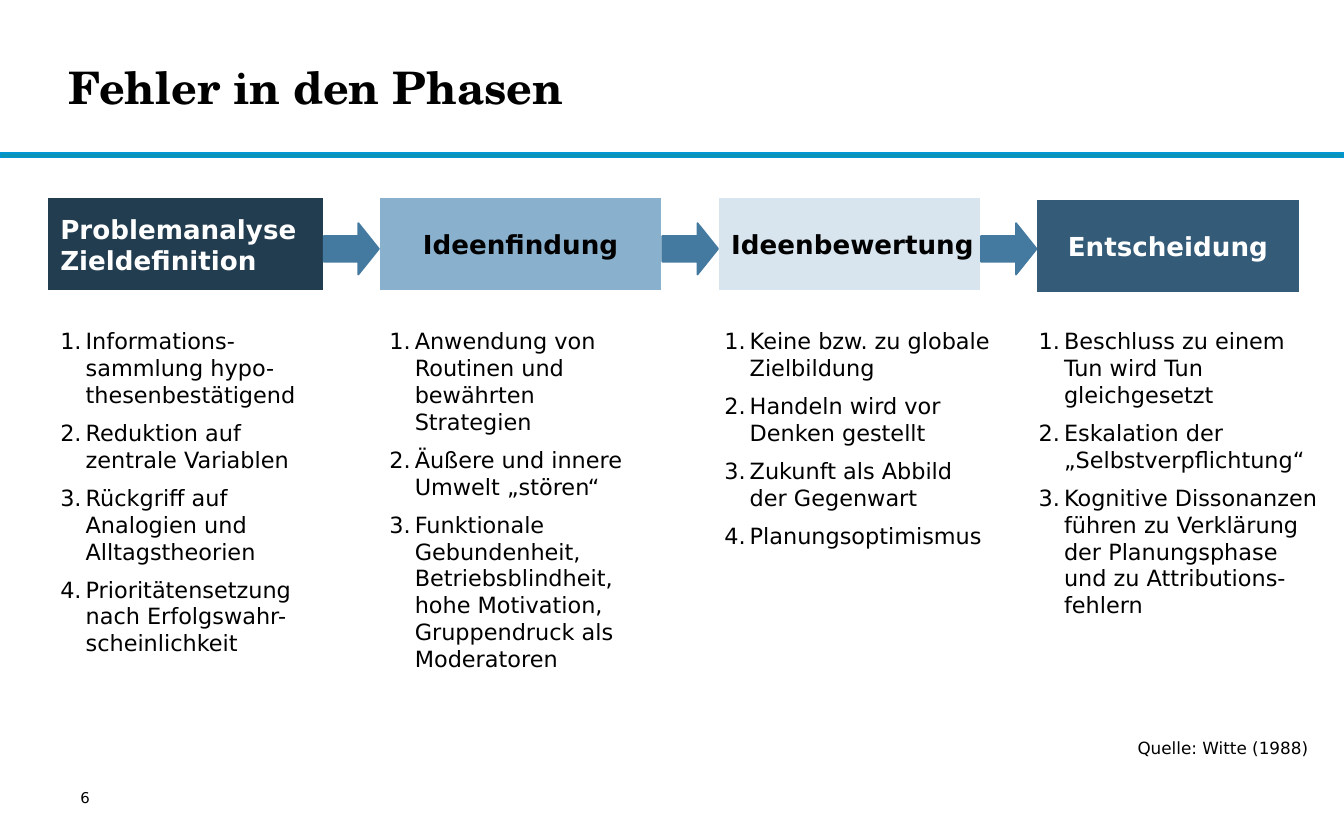
from lxml import etree
from pptx import Presentation, util as u
from pptx.dml.color import RGBColor
from pptx.enum import shapes, text
from pptx.oxml import ns

BLACK = RGBColor(0x00, 0x00, 0x00)
WHITE = RGBColor(0xFF, 0xFF, 0xFF)
RULE_FILL = RGBColor(0x0C, 0x94, 0xB7)
RULE_LINE = RGBColor(0x00, 0x96, 0xD3)
NAVY = RGBColor(0x22, 0x3D, 0x50)
SKY = RGBColor(0x89, 0xB0, 0xCC)
PALE = RGBColor(0xD8, 0xE5, 0xEE)
STEEL = RGBColor(0x34, 0x5B, 0x78)
ARROW = RGBColor(0x45, 0x7A, 0xA0)

LEFT, CENTER, RIGHT = text.PP_ALIGN.LEFT, text.PP_ALIGN.CENTER, text.PP_ALIGN.RIGHT
SERIF, SANS = "TeX Gyre Schola", "DejaVu Sans"

BOX_HEIGHT = 1.78
ARROW_TOP, ARROW_HEIGHT = 4.22, 0.97
LIST_TOP = 6.06


class PhaseSlide:
    """Holds the current slide and its common style."""

    def __init__(self, slide):
        self.slide = slide

    def style(self, paragraph, size, color=BLACK, bold=False, font=SANS, align=LEFT):
        paragraph.alignment = align
        paragraph.font.name = font
        paragraph.font.size = u.Pt(size)
        paragraph.font.bold = bold
        paragraph.font.color.rgb = color

    def shape(self, kind, left, top, width, height, fill, line):
        shape = self.slide.shapes.add_shape(
            kind, u.Cm(left), u.Cm(top), u.Cm(width), u.Cm(height))
        shape.shadow.inherit = False
        shape.fill.solid()
        shape.fill.fore_color.rgb = fill
        shape.line.color.rgb = line
        shape.line.width = u.Pt(1)
        return shape

    def text_box(self, left, top, width, height, words, size, **style):
        shape = self.slide.shapes.add_textbox(
            u.Cm(left), u.Cm(top), u.Cm(width), u.Cm(height))
        frame = shape.text_frame
        frame.word_wrap = True
        frame.text = words
        self.style(frame.paragraphs[0], size, **style)
        return frame

    def title(self, words):
        frame = self.text_box(1.3, 0.38, 19, 2.51, words, 24, bold=True, font=SERIF)
        frame.margin_left = frame.margin_right = 0
        frame.margin_top = frame.margin_bottom = 0
        frame.vertical_anchor = text.MSO_ANCHOR.MIDDLE

    def phase_box(self, left, top, width, words, fill, color, align):
        shape = self.shape(shapes.MSO_SHAPE.RECTANGLE, left, top, width, BOX_HEIGHT,
                           fill, WHITE)
        frame = shape.text_frame
        frame.word_wrap = False
        frame.vertical_anchor = text.MSO_ANCHOR.MIDDLE
        frame.text = words
        for paragraph in frame.paragraphs:
            self.style(paragraph, 14, color, bold=True, align=align)

    def arrow(self, left, right):
        shape = self.shape(shapes.MSO_SHAPE.RIGHT_ARROW, left, ARROW_TOP,
                           right - left, ARROW_HEIGHT, ARROW, ARROW)
        shape.adjustments[1] = 0.4

    def numbered_list(self, left, width, height, items):
        frame = self.text_box(left, LIST_TOP, width, height, "\n".join(items), 12)
        for index, paragraph in enumerate(frame.paragraphs):
            properties = paragraph._p.get_or_add_pPr()
            properties.set("marL", str(u.Cm(0.48)))
            properties.set("indent", str(u.Cm(-0.48)))
            paragraph.space_before = u.Pt(3 if index else 0)
            paragraph.space_after = u.Pt(3)
            etree.SubElement(properties, ns.qn("a:buFont"), typeface="+mj-lt")
            etree.SubElement(properties, ns.qn("a:buAutoNum"), type="arabicPeriod")
            self.style(paragraph, 12)


# Phase boxes: left, top, width, words, fill, text colour, alignment
PHASES = [
    (0.89, 3.73, 5.23, "Problemanalyse\nZieldefinition", NAVY, WHITE, LEFT),
    (7.16, 3.73, 5.36, "Ideenfindung", SKY, BLACK, CENTER),
    (13.57, 3.73, 4.97, "Ideenbewertung", PALE, BLACK, LEFT),
    (19.59, 3.76, 4.97, "Entscheidung", STEEL, WHITE, CENTER),
]

# Errors in each phase: left, width, height, items
ERRORS = [
    (0.89, 5.36, 6.35, [
        "Informations-sammlung hypo-thesenbestätigend",
        "Reduktion auf zentrale Variablen",
        "Rückgriff auf Analogien und Alltagstheorien",
        "Prioritätensetzung nach Erfolgswahr-scheinlichkeit"]),
    (7.11, 5.56, 6.63, [
        "Anwendung von Routinen und bewährten Strategien",
        "Äußere und innere Umwelt „stören“",
        "Funktionale Gebundenheit, Betriebsblindheit, hohe Motivation, "
        "Gruppendruck als Moderatoren"]),
    (13.44, 5.56, 4.34, [
        "Keine bzw. zu globale Zielbildung",
        "Handeln wird vor Denken gestellt",
        "Zukunft als Abbild der Gegenwart",
        "Planungsoptimismus"]),
    (19.38, 5.77, 6.12, [
        "Beschluss zu einem Tun wird Tun gleichgesetzt",
        "Eskalation der „Selbstverpflichtung“",
        "Kognitive Dissonanzen führen zu Verklärung der Planungsphase "
        "und zu Attributions-fehlern"]),
]


def main():
    presentation = Presentation()
    presentation.slide_width = u.Cm(25.4)
    presentation.slide_height = u.Cm(15.88)
    page = PhaseSlide(presentation.slides.add_slide(presentation.slide_layouts[6]))

    # Header
    page.shape(shapes.MSO_SHAPE.RECTANGLE, 0, 2.9, 25.4, 0.08, RULE_FILL, RULE_LINE)
    page.title("Fehler in den Phasen")

    # Process chain
    for phase in PHASES:
        page.phase_box(*phase)
    for current, following in zip(PHASES, PHASES[1:]):
        page.arrow(current[0] + current[2], following[0])

    # Errors below each phase
    for errors in ERRORS:
        page.numbered_list(*errors)

    # Source and page number
    page.text_box(19.86, 13.82, 5.11, 0.64, "Quelle: Witte (1988)", 9, align=RIGHT)
    page.text_box(1.27, 14.78, 2.49, 0.71, "6", 8)

    presentation.save("out.pptx")


if __name__ == "__main__":
    main()
